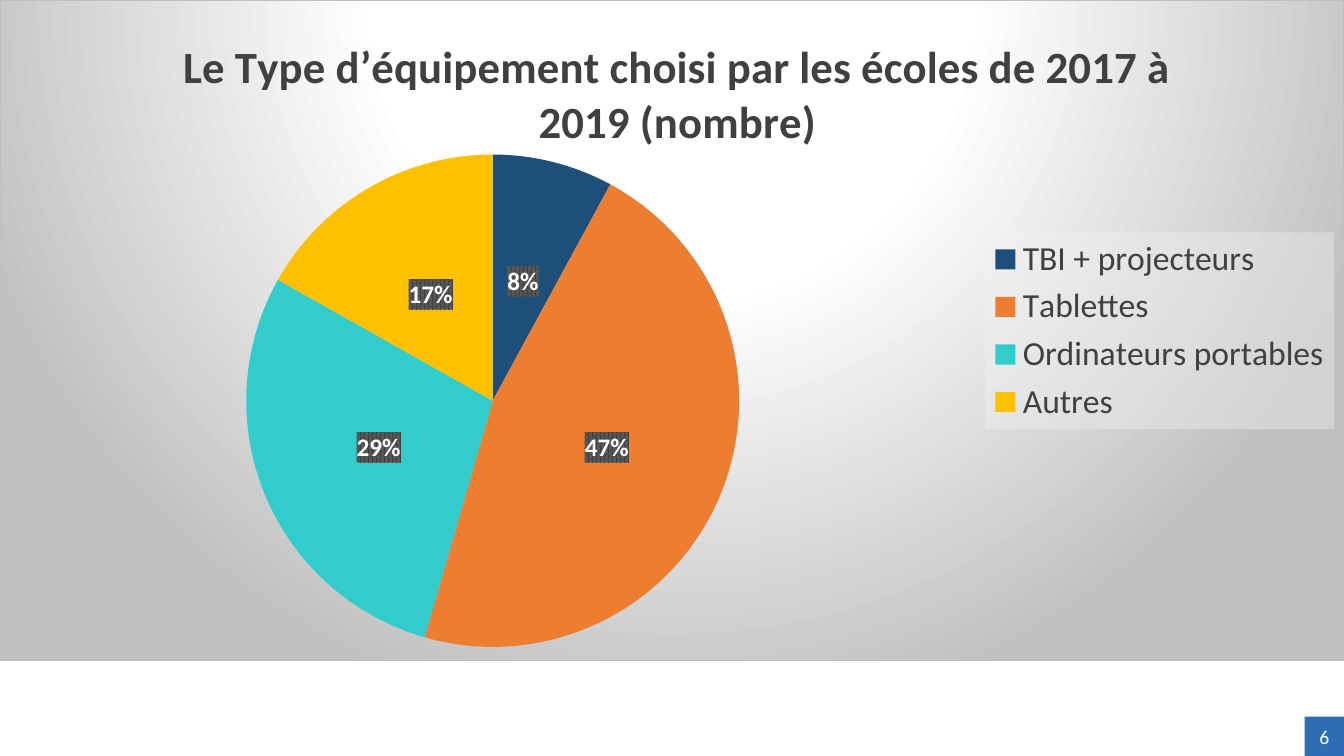
from pptx import Presentation
from pptx.chart.data import CategoryChartData
from pptx.dml.color import RGBColor
from pptx.enum.chart import XL_CHART_TYPE, XL_LABEL_POSITION, XL_LEGEND_POSITION
from pptx.enum.shapes import MSO_SHAPE
from pptx.enum.text import MSO_ANCHOR, PP_ALIGN
from pptx.oxml import parse_xml
from pptx.oxml.ns import nsdecls, qn
from pptx.util import Inches, Pt

PIE = XL_CHART_TYPE.PIE
CENTER_LABEL = XL_LABEL_POSITION.CENTER
LEGEND_RIGHT = XL_LEGEND_POSITION.RIGHT
RECT = MSO_SHAPE.RECTANGLE
MIDDLE = MSO_ANCHOR.MIDDLE
CENTER = PP_ALIGN.CENTER

WHITE = RGBColor(0xFF, 0xFF, 0xFF)
BLACK = RGBColor(0x00, 0x00, 0x00)
DARK = RGBColor(0x40, 0x40, 0x40)
GREY = RGBColor(0x59, 0x59, 0x59)
LIGHT = RGBColor(0xF2, 0xF2, 0xF2)
SILVER = RGBColor(0xBF, 0xBF, 0xBF)
BLUE = RGBColor(0x2C, 0x6D, 0xB4)
NAVY = RGBColor(0x1E, 0x4E, 0x7A)
ORANGE = RGBColor(0xED, 0x7D, 0x31)
TURQUOISE = RGBColor(0x33, 0xCC, 0xCC)
YELLOW = RGBColor(0xFF, 0xC0, 0x00)

FONT = "Calibri"
TITLE = "Le Type d’équipement choisi par les écoles de 2017 à 2019 (nombre)"
EQUIPMENT = [
    ("TBI + projecteurs", 8, NAVY),
    ("Tablettes", 47, ORANGE),
    ("Ordinateurs portables", 29, TURQUOISE),
    ("Autres", 17, YELLOW),
]
BASE_TEXT = {"name": FONT, "size": Pt(10), "color": BLACK}
TITLE_TEXT = {"name": FONT, "size": Pt(32), "bold": True, "color": DARK}
LEGEND_TEXT = {"name": FONT, "size": Pt(24), "color": DARK}
LABEL_TEXT = {"name": FONT, "size": Pt(18), "bold": True, "color": WHITE}
NUMBER_TEXT = {"name": FONT, "size": Pt(14), "color": WHITE}

BACKDROP = f"""<a:gradFill><a:gsLst>
<a:gs pos="0"><a:srgbClr val="{WHITE}"/></a:gs>
<a:gs pos="39000"><a:srgbClr val="{WHITE}"/></a:gs>
<a:gs pos="100000"><a:srgbClr val="{SILVER}"/></a:gs></a:gsLst>
<a:path path="circle"><a:fillToRect l="50000" t="-80000" r="50000" b="180000"/></a:path>
</a:gradFill><a:ln w="9525"><a:solidFill><a:srgbClr val="{SILVER}"/></a:solidFill></a:ln>"""
LEGEND_FILL = f"""<a:solidFill><a:srgbClr val="{LIGHT}"><a:alpha val="39000"/></a:srgbClr>
</a:solidFill><a:ln><a:noFill/></a:ln>"""
LABEL_FILL = f"""<a:pattFill prst="pct75"><a:fgClr><a:srgbClr val="{DARK}"/></a:fgClr>
<a:bgClr><a:srgbClr val="{GREY}"/></a:bgClr></a:pattFill><a:ln><a:noFill/></a:ln>"""


def set_font(font, values):
    for name, value in values.items():
        if name == "color":
            font.color.rgb = value
        else:
            setattr(font, name, value)


def set_look(element, fill):
    sp_pr = parse_xml(f'<c:spPr {nsdecls("c", "a")}>{fill}</c:spPr>')
    element.find(qn("c:txPr")).addprevious(sp_pr)


def set_layout(element, index, target="", **shares):
    for old in element.findall(qn("c:layout")):
        element.remove(old)
    inner = f'<c:layoutTarget val="{target}"/>' if target else ""
    modes = "".join(f'<c:{k}Mode val="edge"/>' for k in ("x", "y"))
    places = "".join(f'<c:{k} val="{v}"/>' for k, v in shares.items())
    element.insert(index, parse_xml(
        f'<c:layout {nsdecls("c")}><c:manualLayout>{inner}{modes}{places}'
        "</c:manualLayout></c:layout>"))


def add_title(chart):
    chart.has_title = True
    title = chart.chart_title
    p = title.text_frame.paragraphs[0]
    r = p.add_run()
    r.text = TITLE
    set_font(r.font, TITLE_TEXT)
    set_layout(title._element, 1, x=0.13, y=0.04)


def add_legend(chart):
    chart.has_legend = True
    legend = chart.legend
    legend.position = LEGEND_RIGHT
    legend.include_in_layout = False
    set_font(legend.font, LEGEND_TEXT)
    set_look(legend._element, LEGEND_FILL)
    set_layout(legend._element, 1, x=0.733, y=0.351, w=0.26, h=0.298)


def add_labels(plot):
    plot.has_data_labels = True
    labels = plot.data_labels
    labels.show_percentage = True
    labels.show_value = False
    labels.number_format = "0%"
    labels.number_format_is_linked = False
    labels.position = CENTER_LABEL
    set_font(labels.font, LABEL_TEXT)
    set_look(labels._element, LABEL_FILL)


def add_pie(s, width, height):
    names, values, colors = zip(*EQUIPMENT)
    data = CategoryChartData()
    data.categories = names
    data.add_series("Series 1", values)
    chart = s.shapes.add_chart(PIE, 0, 0, width, height, data).chart
    set_font(chart.font, BASE_TEXT)
    set_look(chart._element, BACKDROP)
    add_title(chart)
    add_legend(chart)
    plot = chart.plots[0]
    plot.vary_by_categories = True
    add_labels(plot)
    for i, color in enumerate(colors):
        fill = plot.series[0].points[i].format.fill
        fill.solid()
        fill.fore_color.rgb = color
    set_layout(plot._element.getparent(), 0, "inner",
               x=0.183, y=0.233, w=0.367, h=0.746)


def add_page_number(s, number, right, bottom):
    side = Inches(0.39)
    sp = s.shapes.add_shape(RECT, right - side, bottom - side, side, side)
    sp.shadow.inherit = False
    sp.fill.solid()
    sp.fill.fore_color.rgb = BLUE
    sp.line.fill.background()
    tf = sp.text_frame
    for edge in ("left", "top", "right", "bottom"):
        setattr(tf, f"margin_{edge}", 0)
    tf.vertical_anchor = MIDDLE
    p = tf.paragraphs[0]
    p.alignment = CENTER
    r = p.add_run()
    r.text = number
    set_font(r.font, NUMBER_TEXT)


def main():
    prs = Presentation()
    prs.slide_width, prs.slide_height = Inches(13.33), Inches(7.5)
    s = prs.slides.add_slide(prs.slide_layouts[6])
    add_page_number(s, "6", prs.slide_width, prs.slide_height)
    add_pie(s, prs.slide_width, int(prs.slide_height * 0.875))
    prs.save("out.pptx")


if __name__ == "__main__":
    main()
